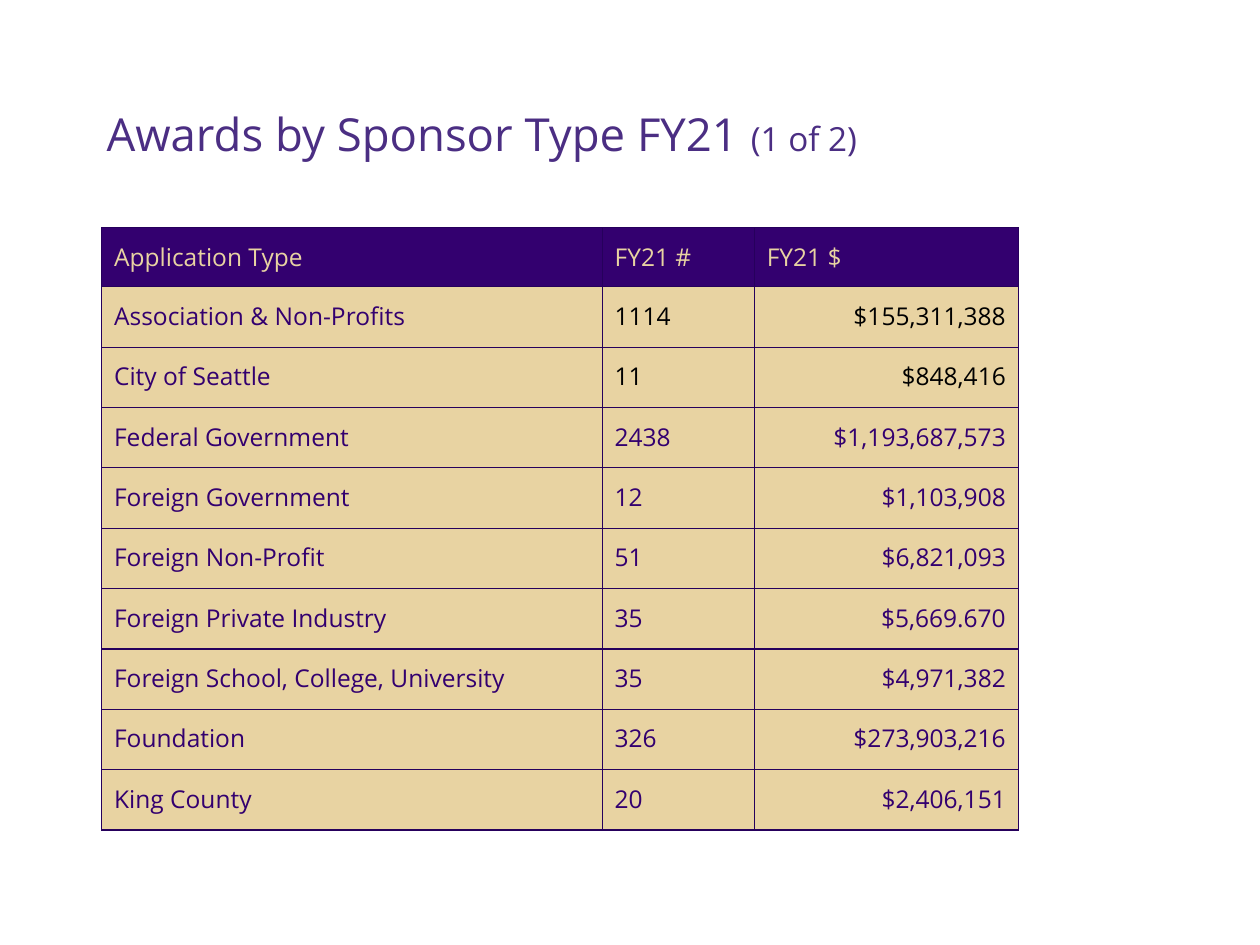
from dataclasses import dataclass

from lxml import etree
from pptx import Presentation
from pptx.dml.color import RGBColor
from pptx.enum.text import MSO_ANCHOR, PP_ALIGN
from pptx.oxml.ns import qn
from pptx.util import Cm, Pt

BOTTOM = MSO_ANCHOR.BOTTOM
LEFT, RIGHT = PP_ALIGN.LEFT, PP_ALIGN.RIGHT


@dataclass(frozen=True)
class Theme:
    """Colours, font and type sizes of the deck."""
    font: str = "Open Sans"
    title: str = "4B2E83"
    purple: str = "33006F"
    gold: str = "E8D3A2"
    border: str = "26005C"
    black: str = "000000"
    title_size: float = 26
    part_size: float = 19
    table_size: float = 14
    border_width: float = 0.75


@dataclass(frozen=True)
class Box:
    """A region of the page."""
    left: int
    top: int
    width: int
    height: int


THEME = Theme()
INSET = Cm(0.25)
HEADER_HEIGHT = Cm(1.19)
COLUMN_SHARES = (0.546, 0.166, 0.288)
HEADINGS = ("Application Type", "FY21 #", "FY21 $")
AWARDS = (
    ("Association & Non-Profits", "1114", "$155,311,388"),
    ("City of Seattle", "11", "$848,416"),
    ("Federal Government", "2438", "$1,193,687,573"),
    ("Foreign Government", "12", "$1,103,908"),
    ("Foreign Non-Profit", "51", "$6,821,093"),
    ("Foreign Private Industry", "35", "$5,669.670"),
    ("Foreign School, College, University", "35", "$4,971,382"),
    ("Foundation", "326", "$273,903,216"),
    ("King County", "20", "$2,406,151"),
)
BLACK_FIGURE_ROWS = (1, 2)


def style_font(font, size, color):
    """Apply the theme font with a size and a colour."""
    font.name = THEME.font
    font.size = Pt(size)
    font.bold = False
    font.color.rgb = RGBColor.from_string(color)


def set_insets(holder):
    """Give a text frame or table cell equal margins."""
    holder.margin_left = holder.margin_right = INSET
    holder.margin_top = holder.margin_bottom = INSET


def set_borders(cell):
    """Draw a thin line on all four sides of a cell."""
    properties = cell._tc.get_or_add_tcPr()
    for position, side in enumerate(("a:lnL", "a:lnR", "a:lnT", "a:lnB")):
        line = etree.Element(qn(side), w=str(Pt(THEME.border_width)))
        fill = etree.SubElement(line, qn("a:solidFill"))
        etree.SubElement(fill, qn("a:srgbClr"), val=THEME.border)
        properties.insert(position, line)


def add_title(page, box, title, part):
    """Place the title with its smaller part number."""
    frame = page.shapes.add_textbox(box.left, box.top, box.width, box.height).text_frame
    frame.word_wrap = True
    frame.vertical_anchor = BOTTOM
    set_insets(frame)
    para = frame.paragraphs[0]
    para.line_spacing = 0.9
    for text, size in ((title, THEME.title_size), (part, THEME.part_size)):
        span = para.add_run()
        span.text = text
        style_font(span.font, size, THEME.title)


def fill_cell(cell, text, fill, color, alignment):
    """Write and style one table cell."""
    cell.text = text
    set_insets(cell)
    set_borders(cell)
    cell.fill.solid()
    cell.fill.fore_color.rgb = RGBColor.from_string(fill)
    para = cell.text_frame.paragraphs[0]
    para.alignment = alignment
    style_font(para.runs[0].font, THEME.table_size, color)


def add_awards_table(page, box, headings, awards):
    """Place the table of awards by sponsor type."""
    rows = (headings, *awards)
    frame = page.shapes.add_table(len(rows), len(headings), box.left, box.top, box.width, box.height)
    table = frame.table
    table.horz_banding = False
    for column, share in zip(table.columns, COLUMN_SHARES):
        column.width = int(box.width * share)
    for row in table.rows:
        row.height = (box.height - HEADER_HEIGHT) // len(awards)
    table.rows[0].height = HEADER_HEIGHT
    for row_index, values in enumerate(rows):
        header = row_index == 0
        fill = THEME.purple if header else THEME.gold
        for column_index, text in enumerate(values):
            color = THEME.gold if header else THEME.purple
            if row_index in BLACK_FIGURE_ROWS and column_index > 0:
                color = THEME.black
            alignment = RIGHT if column_index == 2 and not header else LEFT
            fill_cell(table.cell(row_index, column_index), text, fill, color, alignment)


def main():
    """Build and save the deck."""
    deck = Presentation()
    deck.slide_width, deck.slide_height = Cm(25.4), Cm(19.05)
    page = deck.slides.add_slide(deck.slide_layouts[6])
    add_awards_table(page, Box(Cm(2.05), Cm(4.59), Cm(18.48), Cm(12.15)), HEADINGS, AWARDS)
    add_title(page, Box(Cm(1.9), Cm(1.17), Cm(16.28), Cm(2.34)),
              "Awards by Sponsor Type FY21 ", "(1 of 2)")
    deck.save("out.pptx")


if __name__ == "__main__":
    main()
